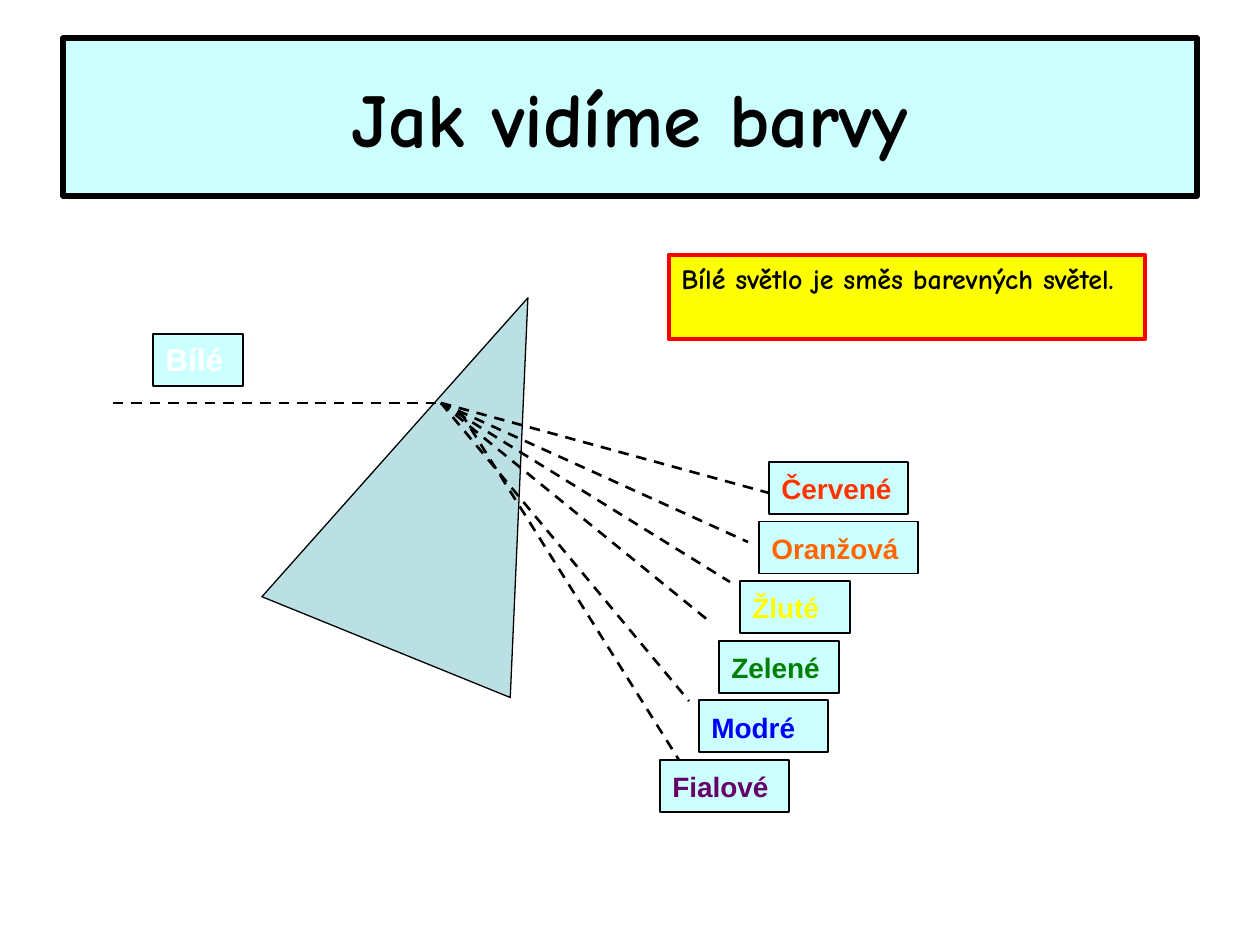
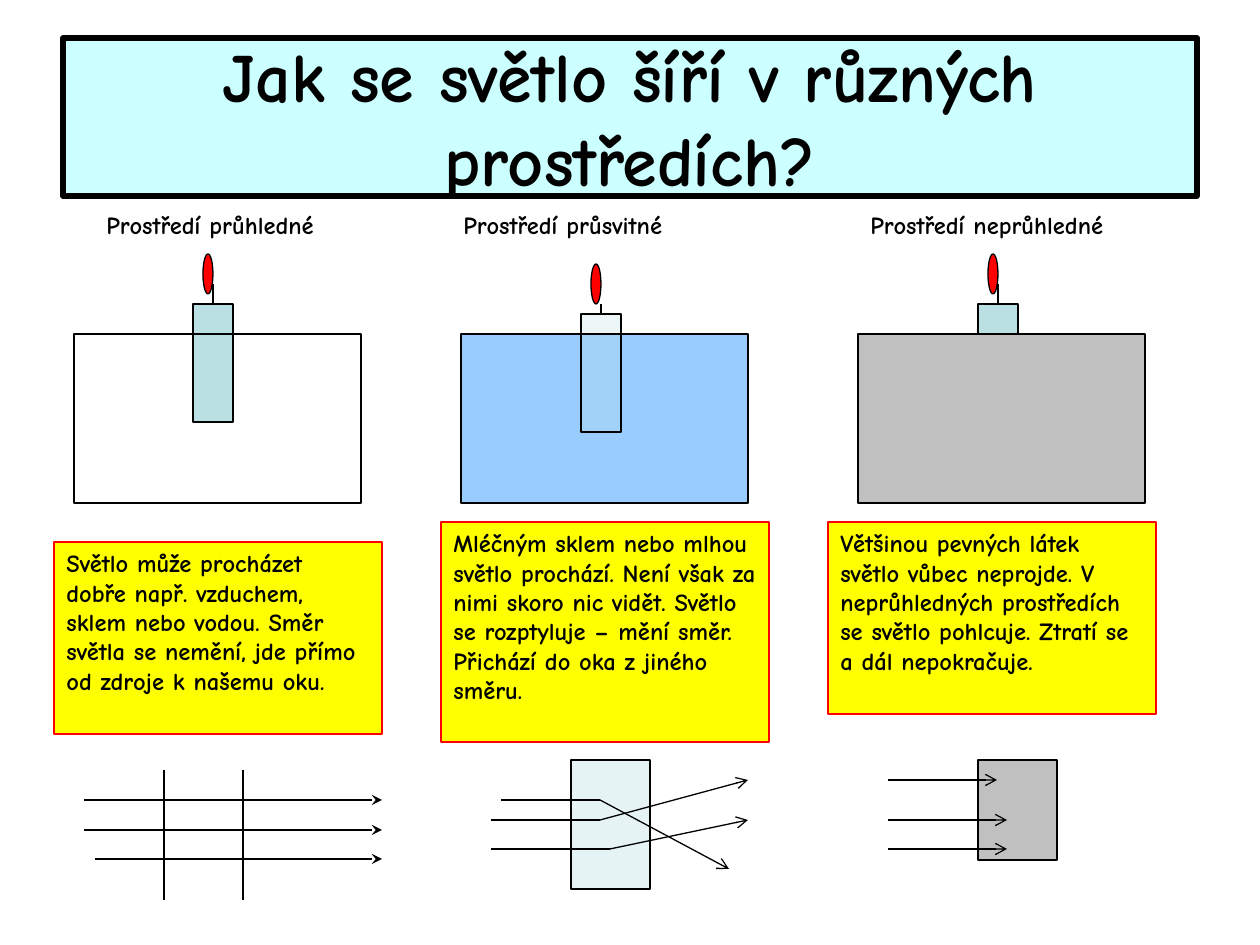
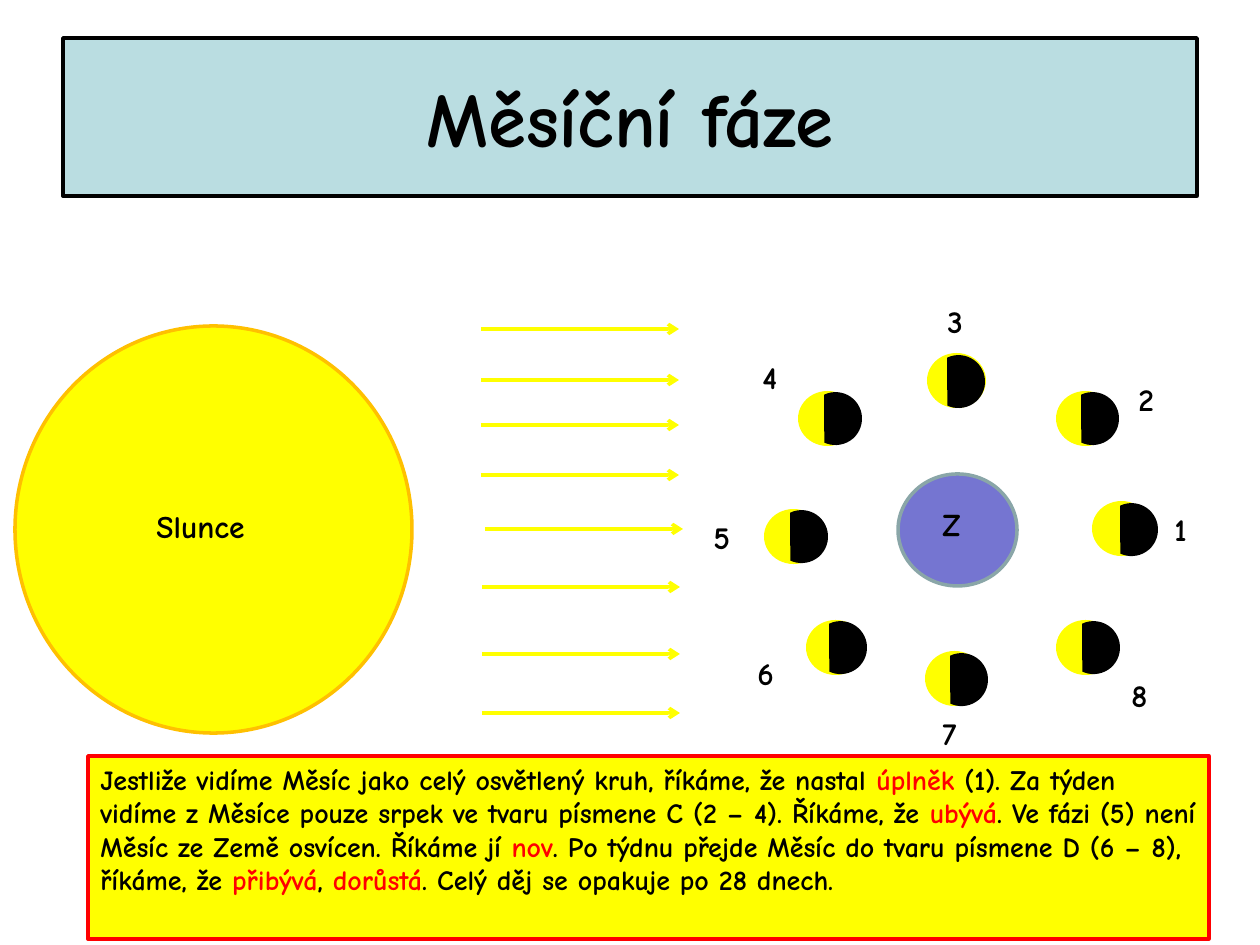
"""Build three lesson slides about light, media and the phases of the Moon."""
from lxml.etree import SubElement
from pptx import Presentation
from pptx.dml.color import RGBColor
from pptx.enum.dml import MSO_LINE_DASH_STYLE as DASH
from pptx.enum.shapes import MSO_CONNECTOR as LINE, MSO_SHAPE as SHAPE
from pptx.enum.text import MSO_ANCHOR as ANCHOR, MSO_AUTO_SIZE as AUTO, PP_ALIGN as ALIGN
from pptx.oxml.ns import qn
from pptx.util import Emu, Pt

PX = 914400 / 126
HAND, PLAIN = "Comic Neue", "Arial"
BLACK, WHITE, RED, YELLOW = "000000", "FFFFFF", "FF0000", "FFFF00"
PALE, GLASS, GREY = "CCFFFF", "BBE0E3", "C0C0C0"
TITLE_BOX = (63, 38, 1134, 158)

PRISM_TITLE = "Jak vidíme barvy"
PRISM_NOTE = "Bílé světlo je směs barevných světel."
WHITE_BEAM = ((113, 403), (441, 403))
WHITE_LABEL = ("Bílé", WHITE, 18, (153, 334, 90, 52))
SPECTRUM_TOP, SPECTRUM_BOTTOM = 462, 760
SPECTRUM = [
    ("Červené", "FF3300", 769, 139, (441, 403), (769, 493)),
    ("Oranžová", "FF6600", 759, 159, (441, 403), (748, 542)),
    ("Žluté", YELLOW, 740, 110, (441, 403), (730, 582)),
    ("Zelené", "008000", 719, 120, (441, 403), (709, 621)),
    ("Modré", "0000FF", 699, 129, (441, 403), (689, 701)),
    ("Fialové", "660066", 660, 129, (461, 413), (679, 760)),
]

MEDIA_TITLE = "Jak se světlo šíří v různých prostředích?"
MEDIA = [
    dict(heading="Prostředí průhledné", heading_at=(94, 258), vessel=(74, WHITE),
         candle=(193, 304, 100), wick=20, surface=(154, 263), note_at=(54, 542, 192),
         note="Světlo může procházet dobře např. vzduchem, sklem nebo vodou. "
              "Směr světla se nemění, jde přímo od zdroje k našemu oku."),
    dict(heading="Prostředí průsvitné", heading_at=(451, 258), vessel=(461, "99CCFF"),
         candle=(581, 314, 27), wick=10, surface=(571, 640), note_at=(441, 522, 220),
         note="Mléčným sklem nebo mlhou světlo prochází. Není však za nimi skoro nic vidět. "
              "Světlo se rozptyluje – mění směr. Přichází do oka z jiného směru."),
    dict(heading="Prostředí neprůhledné", heading_at=(858, 307), vessel=(858, GREY),
         candle=(978, 304, 100), wick=20, surface=None, note_at=(828, 522, 192),
         note="Většinou pevných látek světlo vůbec neprojde. V neprůhledných prostředích "
              "se světlo pohlcuje. Ztratí se a dál nepokračuje."),
]
PANE_EDGES = (164, 243)
BLOCKS = [((571, 760, 79, 129), GLASS, 37), ((978, 760, 79, 100), GREY, 100)]
RAY_PATHS = [
    ("stealth", [(84, 800), (382, 800)]),
    ("stealth", [(84, 830), (382, 830)]),
    ("stealth", [(95, 859), (382, 859)]),
    ("arrow", [(501, 800), (600, 800), (729, 869)]),
    ("arrow", [(491, 820), (600, 820), (748, 780)]),
    ("arrow", [(491, 849), (610, 849), (748, 820)]),
    ("arrow", [(888, 780), (997, 780)]),
    ("arrow", [(888, 820), (1007, 820)]),
    ("arrow", [(888, 849), (1007, 849)]),
]

MOON_TITLE = "Měsíční fáze"
SUNBEAM_LENGTH = 198
SUNBEAMS = [(481, 329), (481, 380), (481, 425), (481, 475),
            (485, 529), (482, 587), (482, 654), (482, 713)]
PHASES = [
    ((1092, 501), (1105, 503), (1162, 504)),
    ((1056, 391), (1066, 392), (1126, 374)),
    ((927, 353), (932, 355), (935, 296)),
    ((798, 391), (809, 392), (750, 352)),
    ((764, 509), (775, 510), (701, 512)),
    ((806, 620), (814, 621), (745, 648)),
    ((925, 651), (935, 653), (930, 708)),
    ((1056, 620), (1067, 621), (1119, 670)),
]
BODY_NAMES = [("Slunce", (144, 501, 169, 52)), ("Z", (930, 499, 79, 50))]
MOON_NOTE = [
    ("Jestliže vidíme Měsíc jako celý osvětlený kruh, říkáme, že nastal ", BLACK),
    ("úplněk", RED),
    (" (1). Za týden vidíme z Měsíce pouze srpek ve tvaru písmene C (2 – 4). Říkáme, že ", BLACK),
    ("ubývá", RED),
    (". Ve fázi (5) není Měsíc ze Země osvícen. Říkáme jí ", BLACK),
    ("nov", RED),
    (". Po týdnu přejde Měsíc do tvaru písmene D (6 – 8), říkáme, že ", BLACK),
    ("přibývá", RED),
    (",", BLACK),
    (" dorůstá", RED),
    (". Celý děj se opakuje po 28 dnech.", BLACK),
]


def px(*lengths):
    return [Emu(round(length * PX)) for length in lengths]


def color(hex_string):
    return RGBColor.from_string(hex_string)


def add_run(paragraph, text, size, tint=BLACK, face=HAND, bold=True):
    run = paragraph.add_run()
    run.text = text
    font = run.font
    font.size, font.name, font.bold = Pt(size), face, bold
    font.color.rgb = color(tint)


def open_frame(holder, anchor=ANCHOR.TOP, align=ALIGN.LEFT):
    frame = holder.text_frame
    frame.word_wrap, frame.auto_size = True, AUTO.NONE
    frame.vertical_anchor = anchor
    frame.paragraphs[0].alignment = align
    return frame.paragraphs[0]


def paint(part, fill, edge, width, opacity=100):
    part.fill.solid()
    part.fill.fore_color.rgb = color(fill)
    if opacity < 100:
        tint = part.fill._xPr.find(qn("a:solidFill"))[0]
        SubElement(tint, qn("a:alpha")).set("val", str(opacity * 1000))
    if edge:
        part.line.color.rgb = color(edge)
        part.line.width = Pt(width)
    else:
        part.line.fill.background()


def add_part(slide, kind, box, fill, edge=BLACK, width=0.75, opacity=100):
    part = slide.shapes.add_shape(kind, *px(*box))
    part.shadow.inherit = False
    paint(part, fill, edge, width, opacity)
    return part


def add_line(slide, start, end, tint=BLACK, width=0.75, dash=None, head=None):
    line = slide.shapes.add_connector(LINE.STRAIGHT, *px(*start, *end))
    line.line.color.rgb = color(tint)
    line.line.width = Pt(width)
    if dash:
        line.line.dash_style = dash
    if head:
        SubElement(line.line._get_or_add_ln(), qn("a:tailEnd")).set("type", head)
    SubElement(line._element.spPr, qn("a:effectLst"))
    return line


def add_label(slide, text, box, size):
    add_run(open_frame(slide.shapes.add_textbox(*px(*box))), text, size)


def add_note(slide, runs, box, size, width):
    paragraph = open_frame(add_part(slide, SHAPE.RECTANGLE, box, YELLOW, RED, width))
    for text, tint in runs:
        add_run(paragraph, text, size, tint)


def add_titled_slide(deck, text, size=44, fill=PALE, width=3):
    slide = deck.slides.add_slide(deck.slide_layouts[5])
    title = slide.shapes.title
    title.left, title.top, title.width, title.height = px(*TITLE_BOX)
    paint(title, fill, BLACK, width)
    add_run(open_frame(title, ANCHOR.MIDDLE, ALIGN.CENTER), text, size)
    return slide


def add_light_name(slide, name, tint, size, box):
    paragraph = open_frame(add_part(slide, SHAPE.RECTANGLE, box, PALE, width=1))
    add_run(paragraph, name, size, tint, PLAIN)
    add_run(paragraph, " ", 18, BLACK, PLAIN, False)


def build_prism(deck):
    slide = add_titled_slide(deck, PRISM_TITLE)
    prism = add_part(slide, SHAPE.ISOSCELES_TRIANGLE, (323, 284, 268, 377), GLASS)
    prism.rotation = 22.1
    for start, end in [WHITE_BEAM] + [light[4:] for light in SPECTRUM]:
        add_line(slide, start, end, width=1.5, dash=DASH.DASH)
    step = (SPECTRUM_BOTTOM - SPECTRUM_TOP) / (len(SPECTRUM) - 1)
    for row, (name, tint, left, width, _, _) in enumerate(SPECTRUM):
        add_light_name(slide, name, tint, 16, (left, SPECTRUM_TOP + row * step, width, 52))
    add_light_name(slide, *WHITE_LABEL)
    add_note(slide, [(PRISM_NOTE, BLACK)], (669, 255, 476, 84), 16, 2.75)


def add_medium(slide, medium):
    vessel_left, vessel_fill = medium["vessel"]
    left, top, opacity = medium["candle"]
    vessel = ((vessel_left, 334, 287, 169), vessel_fill)
    surface = medium["surface"]
    if surface:
        add_part(slide, SHAPE.RECTANGLE, *vessel)
    candle = add_part(slide, SHAPE.RECTANGLE, (left, top, 40, 118), GLASS, opacity=opacity)
    if surface:
        add_line(slide, (surface[0], 334), (surface[1], 334))
    else:
        add_part(slide, SHAPE.RECTANGLE, *vessel)
    wick = add_line(slide, (left + 20, top), (left + 20, top - medium["wick"]))
    wick.begin_connect(candle, 0)
    add_part(slide, SHAPE.OVAL, (left + 10, top - 50, 10, 40), RED)
    heading_left, heading_width = medium["heading_at"]
    add_label(slide, medium["heading"], (heading_left, 204, heading_width, 42), 14)
    note_left, note_top, note_height = medium["note_at"]
    add_note(slide, [(medium["note"], BLACK)], (note_left, note_top, 328, note_height), 14, 1.5)


def build_media(deck):
    slide = add_titled_slide(deck, MEDIA_TITLE, size=40)
    for medium in MEDIA:
        add_medium(slide, medium)
    for edge in PANE_EDGES:
        add_line(slide, (edge, 770), (edge, 900))
    for box, fill, opacity in BLOCKS:
        add_part(slide, SHAPE.RECTANGLE, box, fill, opacity=opacity)
    for head, points in RAY_PATHS:
        for start, end in zip(points, points[1:]):
            add_line(slide, start, end, head=head if end == points[-1] else None)


def build_moon(deck):
    slide = add_titled_slide(deck, MOON_TITLE, fill="BADDE1", width=2)
    add_part(slide, SHAPE.OVAL, (15, 326, 397, 407), YELLOW, "FFC000", 2)
    add_part(slide, SHAPE.OVAL, (898, 474, 119, 112), "7575D1", "8AA6A8", 2)
    for number, (lit, dark, label) in enumerate(PHASES, 1):
        add_part(slide, SHAPE.OVAL, (*lit, 59, 55), YELLOW, None)
        shade = add_part(slide, SHAPE.CHORD, (*dark, 53, 53), BLACK, None)
        shade.adjustments[0], shade.adjustments[1] = 27, 165.43
        shade.rotation = 199.3
        add_label(slide, str(number), (*label, 49, 50), 18)
    for left, top in SUNBEAMS:
        add_line(slide, (left, top), (left + SUNBEAM_LENGTH, top), YELLOW, 2, head="arrow")
    add_note(slide, MOON_NOTE, (88, 756, 1121, 183), 16, 2)
    for name, box in BODY_NAMES:
        add_label(slide, name, box, 18)


def main():
    deck = Presentation()
    deck.slide_width, deck.slide_height = px(1260, 945)
    build_prism(deck)
    build_media(deck)
    build_moon(deck)
    deck.save("out.pptx")


if __name__ == "__main__":
    main()
